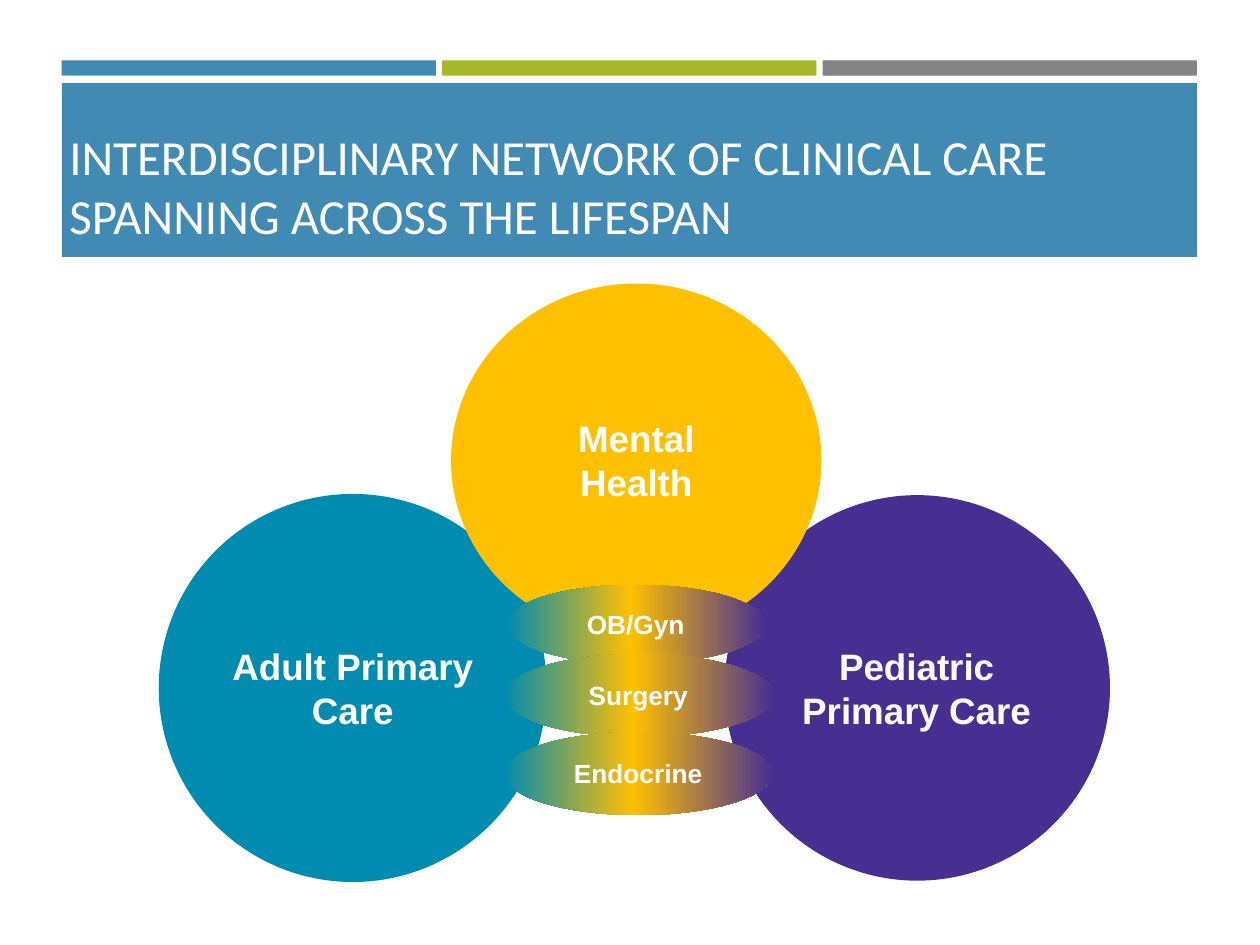
from copy import deepcopy

from pptx import Presentation
from pptx.dml.color import RGBColor
from pptx.enum.shapes import MSO_SHAPE as SHAPE
from pptx.enum.text import MSO_ANCHOR as ANCHOR, PP_ALIGN as ALIGN
from pptx.util import Inches, Pt

BLUE, GREEN, GRAY, WHITE = "418AB3", "A6B727", "838383", "FFFFFF"
TEAL, GOLD, PURPLE = "008BB0", "FFC000", "472F92"
BLEND = [(0, TEAL), (0.48, GOLD), (1, PURPLE)]


def rgb(value):
    return RGBColor.from_string(value)


class Deck:
    """Holds the text style and the current slide, and adds elements to it."""

    color = WHITE
    inset = Inches(0.05)

    def __init__(self, slide):
        self.slide = slide

    def shape(self, kind, box, fill):
        sp = self.slide.shapes.add_shape(kind, *map(Inches, box))
        sp.shadow.inherit = False
        sp.line.fill.background()
        if isinstance(fill, str):
            sp.fill.solid()
            sp.fill.fore_color.rgb = rgb(fill)
        else:
            self.gradient(sp, fill)
        return sp

    def gradient(self, sp, colors):
        sp.fill.gradient()
        sp.fill.gradient_angle = 0
        first = sp._element.spPr.find(".//{*}gs")
        for _ in colors[2:]:
            first.addnext(deepcopy(first))
        for stop, (position, color) in zip(sp.fill.gradient_stops, colors):
            stop.position = position
            stop.color.rgb = rgb(color)

    def text(self, box, text, size, font="Arial", bold=True,
             align=ALIGN.CENTER, anchor=ANCHOR.MIDDLE):
        tf = self.slide.shapes.add_textbox(*map(Inches, box)).text_frame
        tf.word_wrap = True
        tf.vertical_anchor = anchor
        tf.margin_left = tf.margin_right = self.inset
        tf.margin_top = tf.margin_bottom = self.inset
        p = tf.paragraphs[0]
        p.text = text
        p.alignment = align
        p.font.name, p.font.size, p.font.bold = font, Pt(size), bold
        p.font.color.rgb = rgb(self.color)

    def bubble(self, box, fill, label, label_box, size):
        self.shape(SHAPE.OVAL, box, fill)
        self.text(label_box, label, size)


def main():
    prs = Presentation()
    prs.slide_width, prs.slide_height = Inches(10), Inches(7.5)
    deck = Deck(prs.slides.add_slide(prs.slide_layouts[6]))

    for i, color in enumerate([BLUE, GREEN, GRAY]):
        deck.shape(SHAPE.RECTANGLE, (0.49 + i * 3.02, 0.48, 2.97, 0.12), color)
    deck.shape(SHAPE.RECTANGLE, (0.49, 0.66, 9.01, 1.38), BLUE)
    deck.text((0.5, 0.67, 8.75, 1.32),
              "INTERDISCIPLINARY NETWORK OF CLINICAL CARE SPANNING ACROSS THE LIFESPAN",
              28, "Calibri", False, ALIGN.LEFT, ANCHOR.BOTTOM)

    fields = [
        ("Adult Primary Care", TEAL, (1.26, 3.92, 3.08, 3.08), (1.76, 5.08, 2.08, 0.76)),
        ("Pediatric Primary Care", PURPLE, (5.75, 3.93, 3.06, 3.06), (6.24, 5.08, 2.07, 0.76)),
        ("Mental Health", GOLD, (3.58, 2.25, 2.94, 2.81), (4.06, 3.27, 1.98, 0.76)),
    ]
    for label, color, box, label_box in fields:
        deck.bubble(box, color, label, label_box, 21)

    shared = [
        ("OB/Gyn", (4.02, 4.64, 2.05, 0.63), (4.37, 4.79, 1.35, 0.33)),
        ("Surgery", (4, 5.19, 2.14, 0.66), (4.36, 5.35, 1.41, 0.33)),
        ("Endocrine", (4, 5.81, 2.13, 0.66), (4.36, 5.97, 1.41, 0.33)),
    ]
    for label, box, label_box in shared:
        deck.bubble(box, BLEND, label, label_box, 15)

    prs.save("out.pptx")


if __name__ == "__main__":
    main()
